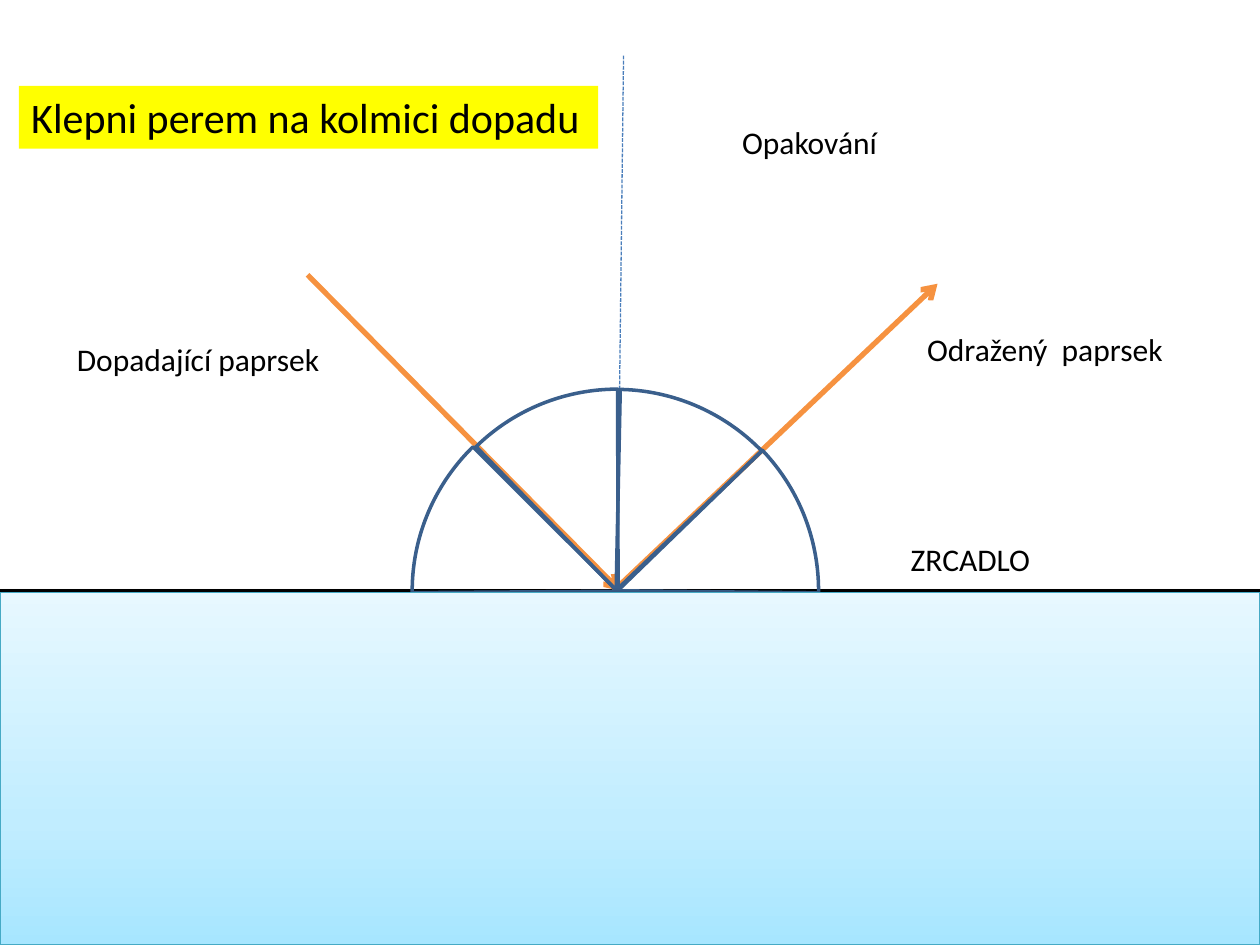
from copy import deepcopy

from pptx import Presentation
from pptx.dml.color import RGBColor as Rgb
from pptx.enum.dml import MSO_LINE as Dash
from pptx.enum.shapes import MSO_CONNECTOR as Conn, MSO_SHAPE as Kind
from pptx.enum.text import MSO_AUTO_SIZE as Fit
from pptx.oxml.ns import qn
from pptx.util import Cm, Pt
from lxml.etree import SubElement as Sub

COLORS = {
    "black": "000000", "ray": "F69240", "normal": "4A7EBB",
    "angle": "3A5F8C", "note": "FFFF00", "rim": "46AAC5",
    "deep": "A7E6FF", "mid": "C1EDFF", "pale": "E7F8FF",
}
WIDTH, HEIGHT = 25.4, 19.05
LEVEL = 11.91  # height of the mirror's surface


def color(name):
    return Rgb.from_string(COLORS[name])


def pen(line, name, width):
    line.color.rgb = color(name)
    line.width = Pt(width)


def shade(effects, blur):
    """Add a soft shadow that falls straight down."""
    drop = Sub(effects, qn("a:outerShdw"), blurRad=str(Pt(blur)),
               dist=str(Pt(1.6)), dir="5400000", rotWithShape="0")
    tint = Sub(drop, qn("a:srgbClr"), val=COLORS["black"])
    Sub(tint, qn("a:alpha"), val="38000")


def add_line(slide, start, end, name, width, dash=None, arrow=False, shadow=False):
    ends = [Cm(v) for v in (*start, *end)]
    link = slide.shapes.add_connector(Conn.STRAIGHT, *ends)
    pen(link.line, name, width)
    if dash:
        link.line.dash_style = dash
    props = link._element.spPr
    if arrow:
        Sub(props.find(qn("a:ln")), qn("a:tailEnd"), type="arrow")
    effects = Sub(props, qn("a:effectLst"))
    if shadow:
        shade(effects, 0)


def add_text(slide, text, box, size=18, fill=None):
    area = slide.shapes.add_textbox(*[Cm(v) for v in box])
    if fill:
        area.fill.solid()
        area.fill.fore_color.rgb = color(fill)
    frame = area.text_frame
    frame.word_wrap = False
    frame.auto_size = Fit.SHAPE_TO_FIT_TEXT
    run = frame.paragraphs[0].add_run()
    run.text = text
    font = run.font
    font.name, font.size = "Calibri", Pt(size)
    font.color.rgb = color("black")


def add_pie(slide, box, turn, start, end):
    """Draw an unfilled sector; start and end are in degrees."""
    pie = slide.shapes.add_shape(Kind.PIE, *[Cm(v) for v in box])
    pie.rotation = turn
    for i, angle in enumerate((start, end)):
        pie.adjustments[i] = angle * 0.6
    pie.fill.background()
    pen(pie.line, "angle", 2)
    pie.shadow.inherit = False


def add_mirror(slide):
    top = 11.94
    glass = slide.shapes.add_shape(
        Kind.RECTANGLE, 0, Cm(top), Cm(WIDTH), Cm(HEIGHT - top))
    fill = glass.fill
    fill.gradient()
    fill.gradient_angle = 90
    # A third stop goes between the two default ones
    first = glass._element.spPr.find(".//" + qn("a:gs"))
    first.addnext(deepcopy(first))
    stops = ((0, "deep"), (0.35, "mid"), (1, "pale"))
    for stop, (place, name) in zip(fill.gradient_stops, stops):
        stop.position = place
        stop.color.rgb = color(name)
    pen(glass.line, "rim", 0.75)
    glass.shadow.inherit = False
    shade(glass._element.spPr.find(qn("a:effectLst")), 3.1)


def main():
    deck = Presentation()
    deck.slide_width, deck.slide_height = Cm(WIDTH), Cm(HEIGHT)
    slide = deck.slides.add_slide(deck.slide_layouts[6])

    # Surface, normal and rays
    add_line(slide, (0, LEVEL), (WIDTH, LEVEL), "black", 2, shadow=True)
    add_line(slide, (12.57, 1.12), (12.37, 17.93), "normal", 0.75,
             dash=Dash.SQUARE_DOT)
    add_line(slide, (6.2, 5.54), (12.5, LEVEL), "ray", 3, arrow=True)
    add_line(slide, (12.37, LEVEL), (18.9, 5.72), "ray", 3, arrow=True)

    # Four angle sectors around the point of incidence
    for pie in (
        ((8.36, 7.85, 8.2, 8.18), 44.9, 180.81, 224.97),
        ((8.33, 7.85, 8.18, 8.18), 44.9, 226.28, 271),
        ((8.31, 7.82, 8.28, 8.2), 0, 179.59, 224.97),
        ((8.31, 7.82, 8.2, 8.18), 90, 226.28, 270.61),
    ):
        add_pie(slide, *pie)

    # Labels and the task
    for text, left, top, width in (
        ("ZRCADLO", 18.11, 10.77, 2.97),
        ("Dopadající paprsek", 1.3, 6.73, 5.46),
        ("Odražený  paprsek", 18.44, 6.53, 5.46),
        ("Opakování", 14.71, 2.36, 3.25),
    ):
        add_text(slide, text, (left, top, width, 1.02))
    add_text(slide, "Klepni perem na kolmici dopadu",
             (0.38, 1.73, 11.68, 1.27), size=24, fill="note")

    # The glass hides the lower part of the normal
    add_mirror(slide)
    deck.save("out.pptx")


if __name__ == "__main__":
    main()
